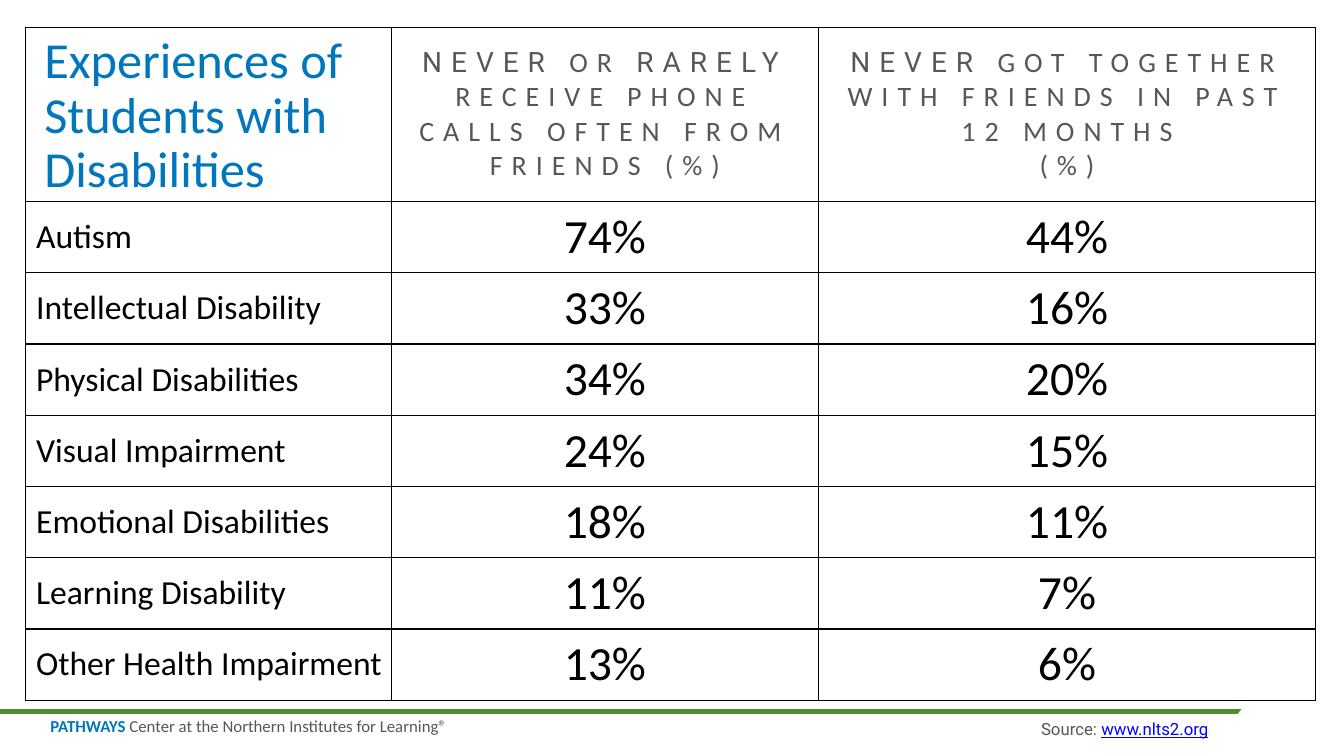
from lxml import etree
from pptx import Presentation
from pptx.dml.color import RGBColor
from pptx.enum.shapes import MSO_CONNECTOR, MSO_SHAPE
from pptx.enum.text import MSO_ANCHOR, MSO_AUTO_SIZE, PP_ALIGN
from pptx.oxml.ns import qn
from pptx.util import Pt

STRAIGHT = MSO_CONNECTOR.STRAIGHT
OVAL = MSO_SHAPE.OVAL
MIDDLE, BOTTOM, TOP = MSO_ANCHOR.MIDDLE, MSO_ANCHOR.BOTTOM, MSO_ANCHOR.TOP
LEFT, CENTER, RIGHT = PP_ALIGN.LEFT, PP_ALIGN.CENTER, PP_ALIGN.RIGHT
NO_AUTOFIT = MSO_AUTO_SIZE.NONE

SANS, HEADER_FONT = "Calibri", "Roboto"
BLUE, GRAY, GREEN = "0076BD", "59565A", "4C902D"
BLACK, WHITE, LINK = "000000", "FFFFFF", "0000FF"
MARGIN, LABEL_INDENT = 2.16, 7.6
HEADER_HEIGHT, ROW_HEIGHT = 124.6, 50.9
COLUMN_WIDTHS = (261.3, 305.2, 355)

HEADERS = (
    [[("NEVER", HEADER_FONT), (" OR ", SANS), ("RARELY", HEADER_FONT),
      (" RECEIVE PHONE CALLS OFTEN FROM FRIENDS (%)", SANS)]],
    [[("NEVER", HEADER_FONT),
      (" GOT TOGETHER WITH FRIENDS IN PAST 12 MONTHS", SANS)],
     [("(%)", SANS)]],
)
RATES = (
    ("Autism", 74, 44),
    ("Intellectual Disability", 33, 16),
    ("Physical Disabilities", 34, 20),
    ("Visual Impairment", 24, 15),
    ("Emotional Disabilities", 18, 11),
    ("Learning Disability", 11, 7),
    ("Other Health Impairment", 13, 6),
)


def rgb(value):
    """Turn a hex string into a colour."""
    return RGBColor.from_string(value)


def add_run(paragraph, text, size, color, font=SANS, bold=False, underline=False):
    """Append a formatted run and return it."""
    run = paragraph.add_run()
    run.text = text
    run.font.name = font
    run.font.size = Pt(size)
    run.font.bold = bold
    run.font.underline = underline
    run.font.color.rgb = rgb(color)
    return run


def set_margins(target, margin):
    """Give a cell or text frame equal margins."""
    target.margin_left = target.margin_right = Pt(margin)
    target.margin_top = target.margin_bottom = Pt(margin)


def place(shape, left, top, width, height):
    """Move and size a shape in points."""
    shape.left, shape.top = Pt(left), Pt(top)
    shape.width, shape.height = Pt(width), Pt(height)


def add_text(slide, box, margin, anchor, align, wrap):
    """Add a text box and return its first paragraph."""
    frame = slide.shapes.add_textbox(*map(Pt, box)).text_frame
    frame.word_wrap = wrap
    frame.vertical_anchor = anchor
    set_margins(frame, margin)
    paragraph = frame.paragraphs[0]
    paragraph.alignment = align
    return paragraph


def add_footer(slide):
    """Draw the green rule, its cut end and the centre's name."""
    rule = slide.shapes.add_connector(STRAIGHT, Pt(0), Pt(508.3), Pt(936), Pt(508.3))
    rule.line.color.rgb = rgb(GREEN)
    rule.line.width = Pt(3)
    etree.SubElement(rule._element.spPr, qn("a:effectLst"))

    center = add_text(slide, (36, 513.4, 289.4, 12.2), 0, TOP, LEFT, False)
    center.line_spacing = 0.85
    add_run(center, "PATHWAYS", 12, BLUE, bold=True)
    add_run(center, " Center at the Northern Institutes for Learning®", 12, GRAY)

    rule_end = slide.shapes.add_shape(OVAL, Pt(875.5), Pt(487.4), Pt(85.7), Pt(41.8))
    rule_end.rotation = 332.1
    rule_end.shadow.inherit = False
    rule_end.fill.solid()
    rule_end.fill.fore_color.rgb = rgb(WHITE)
    rule_end.line.fill.background()


def add_title(slide):
    """Set the title in the table's empty corner."""
    title = slide.shapes.title
    place(title, 29.5, 19.4, 248.4, 124.6)
    frame = title.text_frame
    frame.auto_size = NO_AUTOFIT
    frame.word_wrap = True
    frame.vertical_anchor = BOTTOM
    set_margins(frame, MARGIN)
    paragraph = frame.paragraphs[0]
    paragraph.alignment = LEFT
    paragraph.line_spacing = 0.9
    add_run(paragraph, "Experiences of Students with Disabilities", 36, BLUE)


def format_cell(cell):
    """Make a cell clear, with thin black borders."""
    cell.vertical_anchor = MIDDLE
    set_margins(cell, MARGIN)
    properties = cell._tc.get_or_add_tcPr()
    for side in ("a:lnL", "a:lnR", "a:lnT", "a:lnB"):
        border = etree.SubElement(properties, qn(side), w=str(Pt(1)))
        fill = etree.SubElement(border, qn("a:solidFill"))
        etree.SubElement(fill, qn("a:srgbClr"), val=BLACK)
    cell.fill.background()


def fill_header(cell, lines):
    """Write the widely spaced lines of a column header."""
    frame = cell.text_frame
    for index, line in enumerate(lines):
        paragraph = frame.add_paragraph() if index else frame.paragraphs[0]
        paragraph.alignment = CENTER
        for text, font in line:
            run = add_run(paragraph, text, 20, GRAY, font)
            run.font._element.set("spc", "640")


def add_rates(slide):
    """Build the table of rates by disability."""
    height = HEADER_HEIGHT + ROW_HEIGHT * len(RATES)
    table = slide.shapes.add_table(
        len(RATES) + 1, len(COLUMN_WIDTHS), Pt(18.2), Pt(19.4),
        Pt(sum(COLUMN_WIDTHS)), Pt(height)).table
    table.first_row = table.horz_banding = False
    for column, width in zip(table.columns, COLUMN_WIDTHS):
        column.width = Pt(width)
    for index, row in enumerate(table.rows):
        row.height = Pt(ROW_HEIGHT if index else HEADER_HEIGHT)
    for cell in table.iter_cells():
        format_cell(cell)
    for column, lines in enumerate(HEADERS, 1):
        fill_header(table.cell(0, column), lines)
    for row, (disability, *rates) in enumerate(RATES, 1):
        label = table.cell(row, 0)
        label.margin_left = Pt(LABEL_INDENT)
        add_run(label.text_frame.paragraphs[0], disability, 24, BLACK)
        for column, rate in enumerate(rates, 1):
            paragraph = table.cell(row, column).text_frame.paragraphs[0]
            paragraph.alignment = CENTER
            add_run(paragraph, f"{rate}%", 34, BLACK)


def add_source(slide):
    """Name the data source at the lower right."""
    source = add_text(slide, (577.4, 510.5, 288.7, 20.2), 2.88, MIDDLE, RIGHT, True)
    add_run(source, "Source: ", 12, GRAY, HEADER_FONT)
    add_run(source, "www.nlts2.org", 12, LINK, HEADER_FONT, underline=True)


def main():
    """Build and save the slide."""
    presentation = Presentation()
    presentation.slide_width, presentation.slide_height = Pt(960), Pt(540)
    slide = presentation.slides.add_slide(presentation.slide_layouts[5])
    add_footer(slide)
    add_title(slide)
    add_rates(slide)
    add_source(slide)
    presentation.save("out.pptx")


if __name__ == "__main__":
    main()
